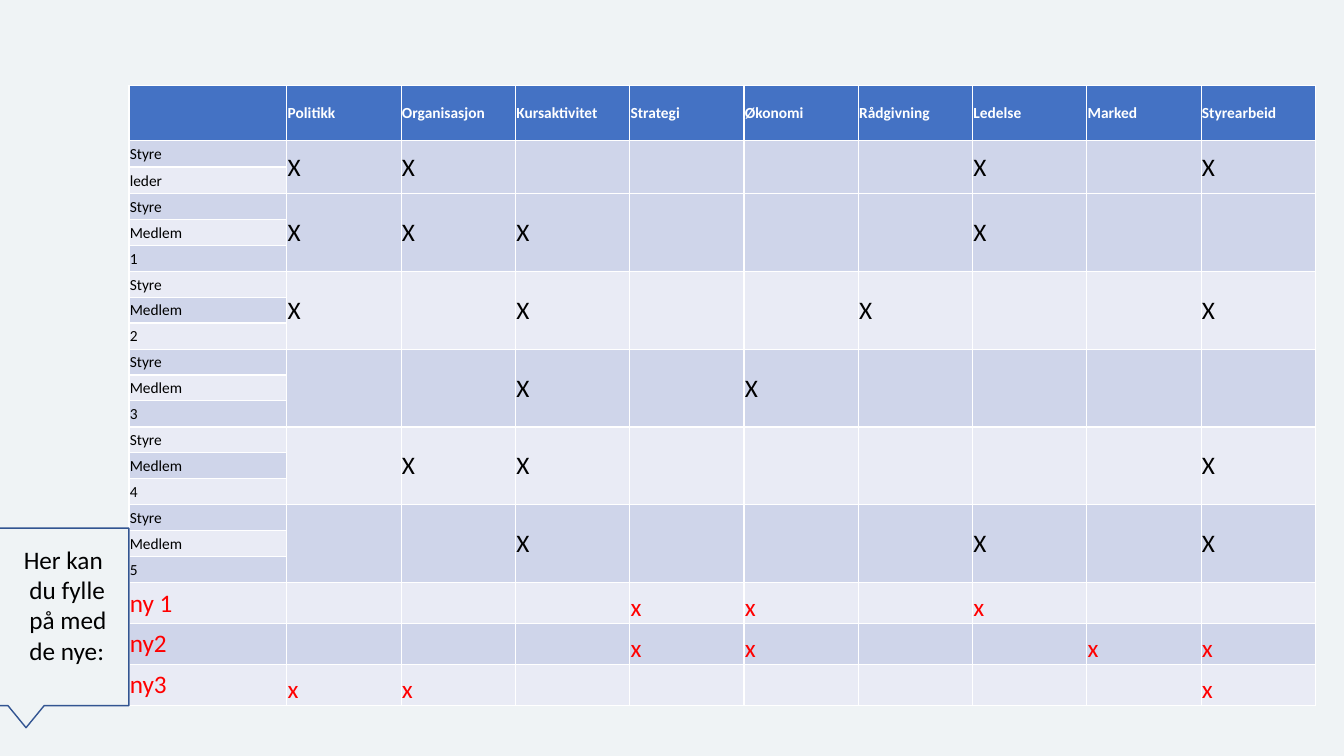
import pptx
import pptx.dml.color
import pptx.enum.shapes
import pptx.enum.text
import pptx.util

Cm = pptx.util.Cm
Pt = pptx.util.Pt
ANCHOR = pptx.enum.text.MSO_ANCHOR

COLORS = {
    "background": "EFF3F5",
    "header": "4472C4",
    "dark band": "CFD5EA",
    "light band": "E9EBF5",
    "header text": "FFFFFF",
    "text": "000000",
    "new": "FF0000",
    "callout line": "325491",
}
SKILLS = ["Politikk", "Organisasjon", "Kursaktivitet", "Strategi", "Økonomi",
          "Rådgivning", "Ledelse", "Marked", "Styrearbeid"]
# Lines of each board member's name, and the skills held
BOARD = [
    (["Styre", "leder"], ["Politikk", "Organisasjon", "Ledelse", "Styrearbeid"]),
    (["Styre", "Medlem", "1"], ["Politikk", "Organisasjon", "Kursaktivitet", "Ledelse"]),
    (["Styre", "Medlem", "2"], ["Politikk", "Kursaktivitet", "Rådgivning", "Styrearbeid"]),
    (["Styre", "Medlem", "3"], ["Kursaktivitet", "Økonomi"]),
    (["Styre", "Medlem", "4"], ["Organisasjon", "Kursaktivitet", "Styrearbeid"]),
    (["Styre", "Medlem", "5"], ["Kursaktivitet", "Ledelse", "Styrearbeid"]),
]
NEW_MEMBERS = [
    ("ny 1", ["Strategi", "Økonomi", "Ledelse"]),
    ("ny2", ["Strategi", "Økonomi", "Marked", "Styrearbeid"]),
    ("ny3", ["Politikk", "Organisasjon", "Styrearbeid"]),
]
HEADER_HEIGHT, NEW_HEIGHT = 1.38, 1.03
LINE_HEIGHTS = {2: [0.67, 0.67], 3: [0.65, 0.65, 0.66]}
NAME_WIDTH = 3.98


def rgb(name):
    return pptx.dml.color.RGBColor.from_string(COLORS[name])


def format_paragraph(p, size, color, bold=False):
    p.font.name = "Calibri"
    p.font.size = Pt(size)
    p.font.bold = bold
    p.font.color.rgb = rgb(color)


def write(cell, text, size, color="text", bold=False, anchor=ANCHOR.MIDDLE):
    cell.text = text
    cell.vertical_anchor = anchor
    format_paragraph(cell.text_frame.paragraphs[0], size, color, bold)


def prepare_cells(table):
    """Set the margins, the banded fill and a small font for every cell."""
    for i, row in enumerate(table.rows):
        fill = "header" if i == 0 else "dark band" if i % 2 else "light band"
        for cell in row.cells:
            cell.margin_left = cell.margin_right = cell.margin_top = Cm(0.02)
            cell.margin_bottom = 0
            cell.fill.solid()
            cell.fill.fore_color.rgb = rgb(fill)
            format_paragraph(cell.text_frame.paragraphs[0], 11, "text")


def add_skill_table(slide, left, top, width):
    heights = [HEADER_HEIGHT]
    for lines, _ in BOARD:
        heights += LINE_HEIGHTS[len(lines)]
    heights += [NEW_HEIGHT] * len(NEW_MEMBERS)
    table = slide.shapes.add_table(len(heights), len(SKILLS) + 1, Cm(left), Cm(top),
                                   Cm(width), Cm(sum(heights))).table
    for row, height in zip(table.rows, heights):
        row.height = Cm(height)
    skill_width = (width - NAME_WIDTH) / len(SKILLS)
    for j, column in enumerate(table.columns):
        column.width = Cm(skill_width if j else NAME_WIDTH)
    prepare_cells(table)

    for j, skill in enumerate(SKILLS, 1):
        write(table.cell(0, j), skill, 11, "header text", bold=True)
    i = 1
    for lines, held in BOARD:
        last = i + len(lines) - 1
        for k, line in enumerate(lines):
            write(table.cell(i + k, 0), line, 11)
        for j, skill in enumerate(SKILLS, 1):
            table.cell(i, j).merge(table.cell(last, j))
            if skill in held:
                write(table.cell(i, j), "X", 18)
        i = last + 1
    for i, (name, held) in enumerate(NEW_MEMBERS, i):
        write(table.cell(i, 0), name, 18, "new")
        for skill in held:
            write(table.cell(i, SKILLS.index(skill) + 1), "x", 18, "new",
                  anchor=ANCHOR.BOTTOM)


def add_callout(slide, left, top, width, height):
    sp = slide.shapes.add_shape(pptx.enum.shapes.MSO_SHAPE.RECTANGULAR_CALLOUT,
                                Cm(left), Cm(top), Cm(width), Cm(height))
    sp.shadow.inherit = False
    sp.fill.background()
    sp.line.color.rgb = rgb("callout line")
    sp.line.width = Pt(1)
    box = slide.shapes.add_textbox(Cm(left + 0.76), Cm(top + 0.28), Cm(2.72), Cm(3.33))
    tf = box.text_frame
    tf.word_wrap = False
    tf.auto_size = pptx.enum.text.MSO_AUTO_SIZE.SHAPE_TO_FIT_TEXT
    tf.text = "Her kan\n du fylle\n på med\n de nye:"
    for p in tf.paragraphs:
        format_paragraph(p, 18, "text")


def main():
    prs = pptx.Presentation()
    prs.slide_width, prs.slide_height = Cm(33.87), Cm(19.05)
    slide = prs.slides.add_slide(prs.slide_layouts[6])
    slide.background.fill.solid()
    slide.background.fill.fore_color.rgb = rgb("background")
    add_skill_table(slide, 3.25, 2.16, 29.9)
    add_callout(slide, -0.41, 13.31, 3.66, 4.47)
    prs.save("out.pptx")


if __name__ == "__main__":
    main()
